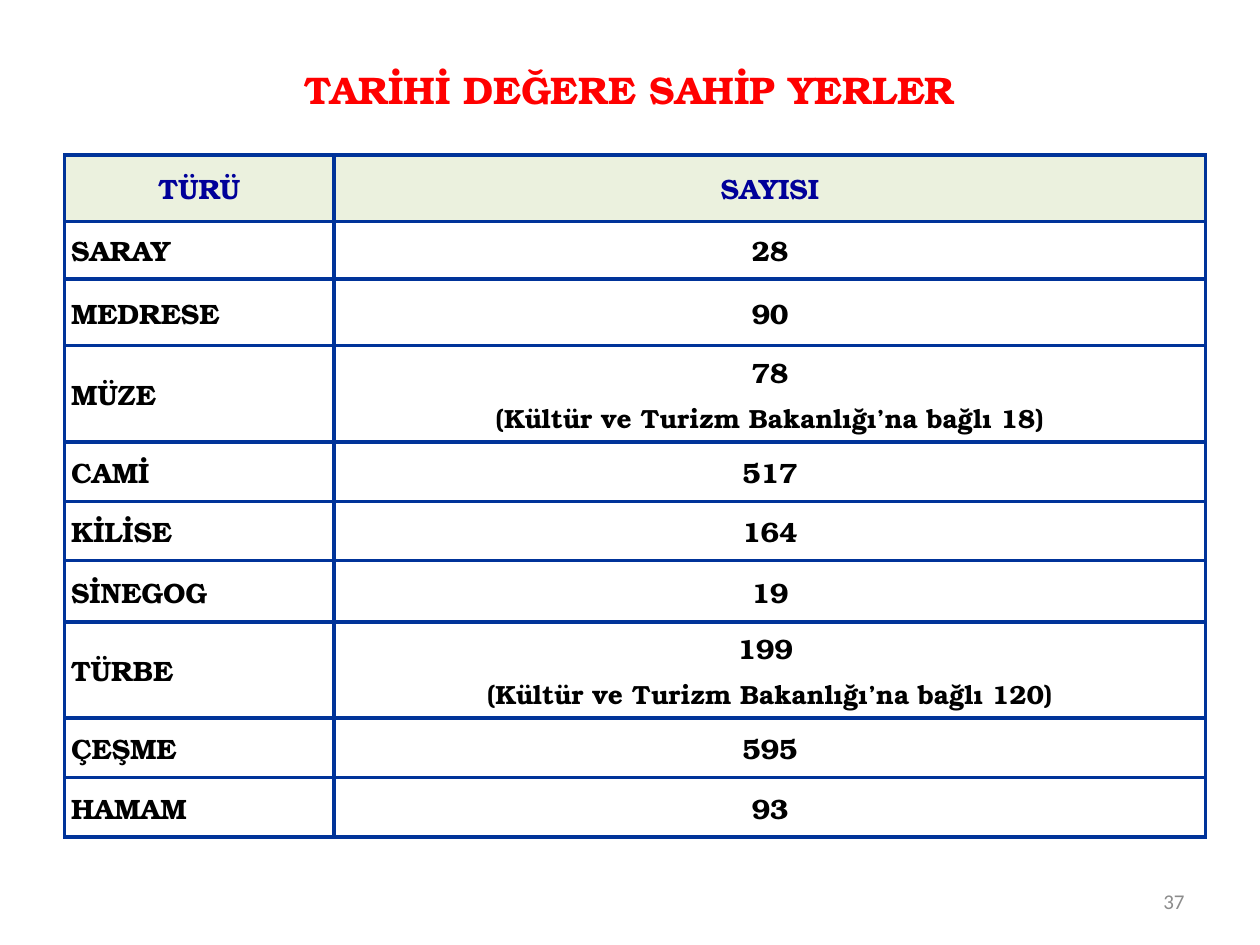
"""Build a slide with a table of the numbers of historic places by type."""
import pptx
import pptx.util
import pptx.dml.color
import pptx.enum.text
import pptx.oxml
import pptx.oxml.ns

Pt = pptx.util.Pt
ALIGN = pptx.enum.text.PP_ALIGN
ANCHOR = pptx.enum.text.MSO_ANCHOR

TITLE = "TARİHİ DEĞERE SAHİP YERLER"
PAGE = "37"
HEADER = ("TÜRÜ", ["SAYISI"])
PLACES = [
    ("SARAY", ["28"]),
    ("MEDRESE", ["90"]),
    ("MÜZE", ["78", "(Kültür ve Turizm Bakanlığı’na bağlı 18)"]),
    ("CAMİ", ["517"]),
    ("KİLİSE", ["164"]),
    ("SİNEGOG", ["19"]),
    ("TÜRBE", ["199 ", "(Kültür ve Turizm Bakanlığı’na bağlı 120)"]),
    ("ÇEŞME", ["595"]),
    ("HAMAM", ["93"]),
]
COL_WIDTHS = [154, 498]
ROW_HEIGHTS = [38, 33, 38, 55, 34, 34, 35, 55, 34, 34]
COLORS = {"title": "FF0000", "head": "000099", "body": "000000", "page": "8C8C8C",
          "head_fill": "EBF1DE", "body_fill": "FFFFFF", "border": "003399"}
SERIF = "TeX Gyre Bonum"


def rgb(key):
    return pptx.dml.color.RGBColor.from_string(COLORS[key])


def write(p, text, size=16, color="body", font=SERIF, bold=True, align=ALIGN.CENTER, before=0):
    p.alignment = align
    p.space_before = Pt(before)
    r = p.add_run()
    r.text = text
    r.font.size = Pt(size)
    r.font.name = font
    r.font.bold = bold
    r.font.color.rgb = rgb(color)


def set_borders(cell, width=2.25):
    tcPr = cell._tc.get_or_add_tcPr()
    for i, side in enumerate(("lnL", "lnR", "lnT", "lnB")):
        tcPr.insert(i, pptx.oxml.parse_xml(
            f'<a:{side} {pptx.oxml.ns.nsdecls("a")} w="{Pt(width)}"><a:solidFill>'
            f'<a:srgbClr val="{COLORS["border"]}"/></a:solidFill></a:{side}>'))


def fill_cell(cell, lines, align, color, fill):
    cell.margin_left = cell.margin_right = Pt(3.6)
    cell.margin_top = cell.margin_bottom = 0
    cell.vertical_anchor = ANCHOR.MIDDLE
    cell.fill.solid()
    cell.fill.fore_color.rgb = rgb(fill)
    set_borders(cell)
    tf = cell.text_frame
    for i, line in enumerate(lines):
        p = tf.add_paragraph() if i else tf.paragraphs[0]
        write(p, line, size=15 if i else 16, color=color, align=align, before=3.5)


def add_title(s):
    sp = s.shapes.title
    sp.left, sp.top, sp.width, sp.height = Pt(37), Pt(37.5), Pt(646), Pt(44)
    tf = sp.text_frame
    tf.margin_top = tf.margin_bottom = 0
    tf.vertical_anchor = ANCHOR.TOP
    write(tf.paragraphs[0], TITLE, size=22, color="title")


def add_places(s):
    rows = [HEADER] + PLACES
    table = s.shapes.add_table(len(rows), len(COL_WIDTHS), Pt(37), Pt(88.5),
                               Pt(sum(COL_WIDTHS)), Pt(sum(ROW_HEIGHTS))).table
    for col, width in zip(table.columns, COL_WIDTHS):
        col.width = Pt(width)
    for i, ((kind, counts), height) in enumerate(zip(rows, ROW_HEIGHTS)):
        table.rows[i].height = Pt(height)
        part = "body" if i else "head"
        kind_align = ALIGN.LEFT if i else ALIGN.CENTER
        fill_cell(table.cell(i, 0), [kind], kind_align, part, part + "_fill")
        fill_cell(table.cell(i, 1), counts, ALIGN.CENTER, part, part + "_fill")


def add_page_number(s):
    tf = s.shapes.add_textbox(Pt(516), Pt(500.5), Pt(168), Pt(29)).text_frame
    tf.word_wrap = True
    tf.vertical_anchor = ANCHOR.MIDDLE
    write(tf.paragraphs[0], PAGE, size=12, color="page", font="Calibri",
          bold=False, align=ALIGN.RIGHT)


def main():
    prs = pptx.Presentation()
    prs.slide_width, prs.slide_height = Pt(720), Pt(540)
    s = prs.slides.add_slide(prs.slide_layouts[5])
    add_page_number(s)
    add_title(s)
    add_places(s)
    prs.save("out.pptx")


if __name__ == "__main__":
    main()
